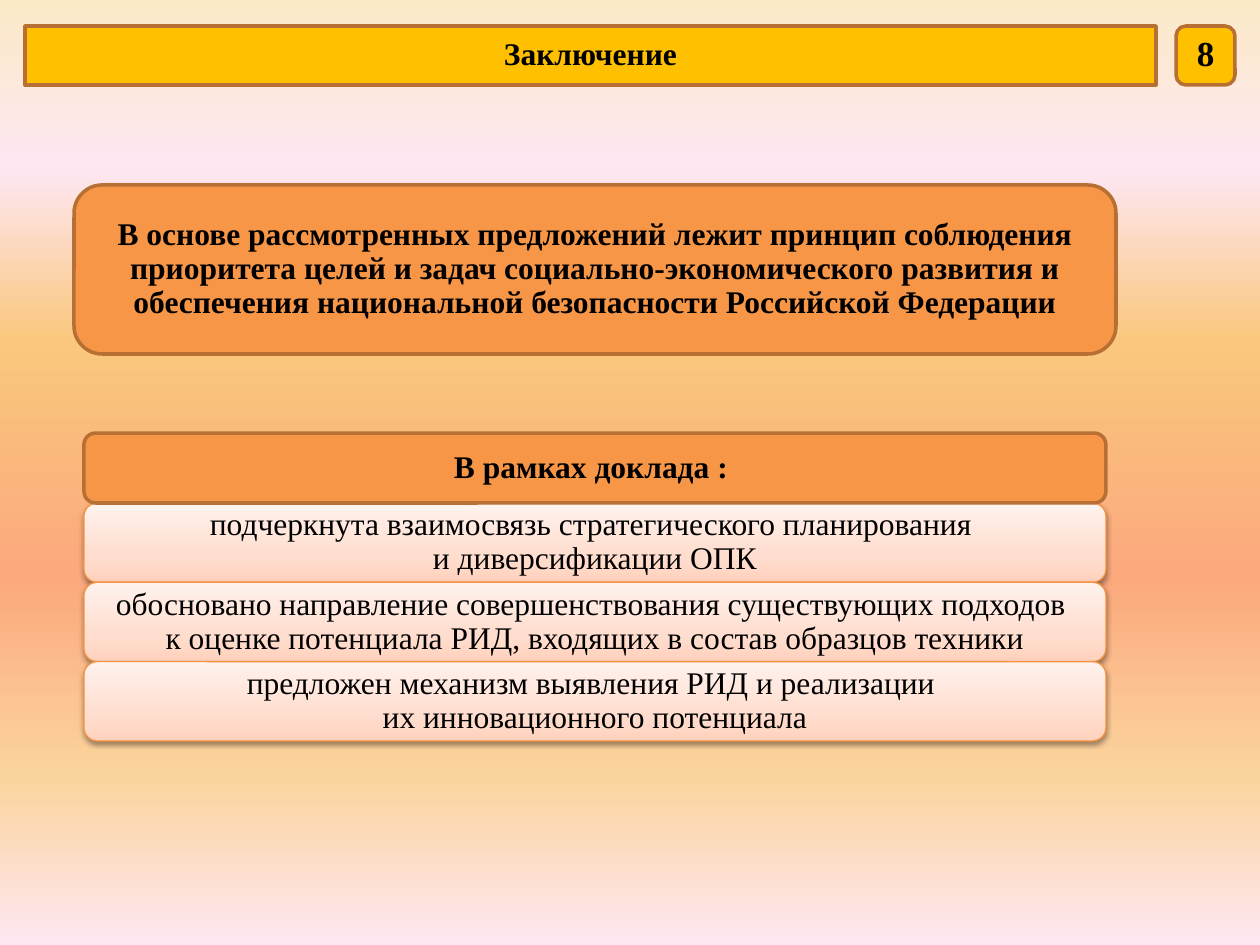
from lxml.etree import SubElement
from pptx import Presentation
from pptx.dml.color import RGBColor
from pptx.enum.shapes import MSO_SHAPE
from pptx.enum.text import MSO_ANCHOR, MSO_AUTO_SIZE, PP_ALIGN
from pptx.oxml.ns import qn
from pptx.util import Pt

PX = 914400 / 126
FONT = "Times New Roman"
BLACK = RGBColor(0x00, 0x00, 0x00)
GOLD = RGBColor(0xFF, 0xC0, 0x00)
ORANGE = RGBColor(0xF7, 0x96, 0x46)
BROWN = RGBColor(0xB7, 0x6F, 0x34)
EDGE = RGBColor(0xF6, 0x92, 0x40)
SKY = [(0, "FBEAC7"), (18, "FEE7F2"), (36, "FAC77D"),
       (61, "FBA97D"), (82, "FBD49C"), (100, "FEE7F2")]
PEACH = [(0, "FFD2BD"), (35, "FFDED0"), (100, "FFF2ED")]

PRINCIPLE = ("В основе рассмотренных предложений лежит принцип соблюдения "
             "приоритета целей и задач социально-экономического развития и "
             "обеспечения национальной безопасности Российской Федерации")
RESULTS = [
    "подчеркнута взаимосвязь стратегического планирования \nи диверсификации ОПК",
    "обосновано направление совершенствования существующих подходов \n"
    "к оценке потенциала РИД, входящих в состав образцов техники",
    "предложен механизм выявления РИД и реализации \nих инновационного потенциала",
]


def px(n):
    return round(n * PX)


def assign(item, values):
    for name, value in values.items():
        setattr(item, name, value)


def add(parent, tag, **attrs):
    return SubElement(parent, qn(tag), {k: str(v) for k, v in attrs.items()})


def blend(fill, root, stops, angle):
    """Fill with a gradient; the angle runs counter-clockwise."""
    fill.gradient()
    fill.gradient_angle = angle
    stop_list = root.find(".//" + qn("a:gsLst"))
    for old in list(stop_list):
        stop_list.remove(old)
    for pos, color in stops:
        add(add(stop_list, "a:gs", pos=pos * 1000), "a:srgbClr", val=color)


def drop_shadow(shape):
    effects = shape.element.spPr.find(qn("a:effectLst"))
    outer = add(effects, "a:outerShdw", blurRad=Pt(3.1), dist=Pt(1.6),
                dir=90 * 60000, rotWithShape=0)
    add(add(outer, "a:srgbClr", val="000000"), "a:alpha", val=38000)


def write(shape, text, size=18, bold=True):
    frame = shape.text_frame
    assign(frame, {"word_wrap": True, "auto_size": MSO_AUTO_SIZE.NONE,
                   "vertical_anchor": MSO_ANCHOR.MIDDLE,
                   "margin_left": px(5), "margin_right": px(5),
                   "margin_top": px(6), "margin_bottom": px(6)})
    para = frame.paragraphs[0]
    para.text = text
    assign(para, {"alignment": PP_ALIGN.CENTER, "line_spacing": 0.9,
                  "space_before": Pt(0), "space_after": Pt(0)})
    for run in para.runs:
        assign(run.font, {"name": FONT, "size": Pt(size), "bold": bold})
        run.font.color.rgb = BLACK


def paint(shape, color, edge=BROWN, width=2):
    shape.shadow.inherit = False
    if color is PEACH:
        blend(shape.fill, shape.element, PEACH, 90)
    else:
        shape.fill.solid()
        shape.fill.fore_color.rgb = color
    shape.line.color.rgb = edge
    shape.line.width = Pt(width)


def card(slide, box):
    return slide.shapes.add_shape(MSO_SHAPE.ROUNDED_RECTANGLE, *map(px, box))


def heading(slide, box, text, number):
    """Title bar with a square number badge at its right end."""
    x, y, w, h = box
    title = slide.shapes.title
    bar = (x, y, w - h - 20, h)
    assign(title, dict(zip(("left", "top", "width", "height"), map(px, bar))))
    shape = add(title.element.spPr, "a:prstGeom", prst="roundRect")
    add(shape, "a:avLst")
    badge = card(slide, (x + w - h, y, h, h))
    for part, words, size in ((title, text, 18), (badge, number, 20)):
        paint(part, GOLD)
        write(part, words, size)


def principle(slide, box):
    panel = card(slide, box)
    paint(panel, ORANGE)
    write(panel, PRINCIPLE)


def results(slide, box, head=70):
    """Header with equal rows stacked below it."""
    x, y, w, h = box
    step = (h - head) / len(RESULTS)
    for i, text in enumerate(RESULTS):
        row = card(slide, (x, y + head + i * step, w, step))
        paint(row, PEACH, EDGE, 0.75)
        drop_shadow(row)
        write(row, text, bold=False)
    top = card(slide, (x, y, w, head))
    paint(top, ORANGE)
    write(top, "В рамках доклада : ")


def main():
    deck = Presentation()
    assign(deck, {"slide_width": px(1260), "slide_height": px(945)})
    slide = deck.slides.add_slide(deck.slide_layouts[5])
    blend(slide.background.fill, slide.element, SKY, 270)
    heading(slide, (25, 26, 1210, 59), "Заключение", "8")
    principle(slide, (74, 185, 1042, 169))
    results(slide, (84, 433, 1022, 308))
    deck.save("out.pptx")


if __name__ == "__main__":
    main()
